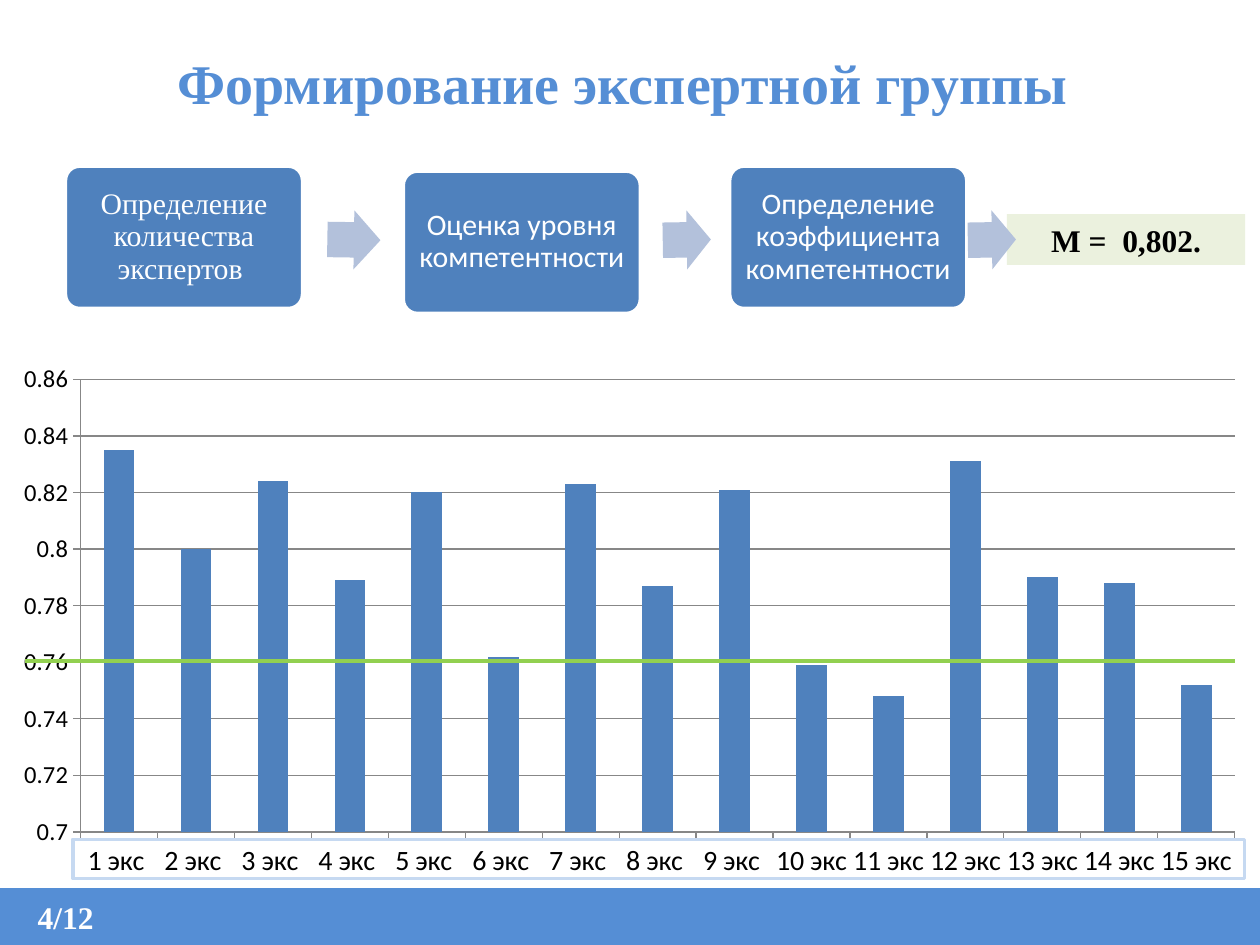
"""Builds the slide on forming an expert group: three steps, a result and a competence chart."""
from pptx import Presentation
from pptx.chart.data import CategoryChartData
from pptx.dml.color import RGBColor
from pptx.enum.chart import XL_CHART_TYPE as ChartType, XL_TICK_MARK as Tick
from pptx.enum.shapes import MSO_CONNECTOR as Connector, MSO_SHAPE as Shape
from pptx.enum.text import MSO_ANCHOR as Anchor, PP_ALIGN as Align
from pptx.oxml import parse_xml
from pptx.oxml.ns import nsdecls
from pptx.util import Cm, Pt

SERIF, SANS = "Times New Roman", "Calibri"
COLORS = {
    "accent": "558ED5", "step": "4F81BD", "arrow": "B3C1DB", "result": "EBF1DE",
    "threshold": "92D050", "frame": "C6D9F1", "grid": "878787",
    "white": "FFFFFF", "black": "000000",
}
TITLE = "Формирование экспертной группы "
PAGE = "4/12"
RESULT = "M =  0,802."
STEPS = [
    ("Определение количества экспертов ", SERIF, 1.32, 3.35),
    ("Оценка уровня компетентности ", SANS, 8.13, 3.45),
    ("Определение коэффициента компетентности ", SANS, 14.71, 3.35),
]
ARROWS = [(6.6, 1.07, 0.9), (13.36, 0.97, -0.9), (19.51, 0.97, -0.9)]
COMPETENCE = [0.835, 0.8, 0.824, 0.789, 0.82, 0.762, 0.823, 0.787,
              0.821, 0.759, 0.748, 0.831, 0.79, 0.788, 0.752]
PLOT = {"x": 0.064, "y": 0.047, "w": 0.916, "h": 0.845}


def color(name):
    return RGBColor.from_string(COLORS[name])


def set_font(font, face, size, tint, bold=False):
    font.name, font.size, font.bold = face, Pt(size), bold
    font.color.rgb = color(tint)


def write(holder, text, face, size, tint, bold=False, align=Align.CENTER):
    frame = holder.text_frame
    frame.text = text
    frame.word_wrap = True
    frame.vertical_anchor = Anchor.MIDDLE
    paragraph = frame.paragraphs[0]
    paragraph.alignment = align
    set_font(paragraph.font, face, size, tint, bold)
    return frame


def add_block(slide, kind, box, fill=None, line=None):
    block = slide.shapes.add_shape(kind, *map(Cm, box))
    block.shadow.inherit = False
    if fill:
        block.fill.solid()
        block.fill.fore_color.rgb = color(fill)
    else:
        block.fill.background()
    if line:
        block.line.color.rgb = color(line)
        block.line.width = Pt(2)
    else:
        block.line.fill.background()
    return block


def add_step(slide, text, face, left, top):
    step = add_block(slide, Shape.ROUNDED_RECTANGLE, (left, top, 4.78, 2.87), "step", "white")
    step.adjustments[0] = 0.1
    frame = write(step, text, face, 17, "white")
    frame.margin_left = frame.margin_right = Cm(0.18)
    frame.margin_top = frame.margin_bottom = Cm(0.18)
    frame.paragraphs[0].line_spacing = 0.9


def add_arrow(slide, left, width, rotation):
    arrow = add_block(slide, Shape.RIGHT_ARROW, (left, 4.24, width, 1.19), "arrow")
    arrow.adjustments[0], arrow.adjustments[1] = 0.6, 0.5
    arrow.rotation = rotation


def add_competence_chart(slide):
    data = CategoryChartData()
    data.categories = [f"{number} экс " for number in range(1, len(COMPETENCE) + 1)]
    data.add_series("Series 1", COMPETENCE)
    chart = slide.shapes.add_chart(
        ChartType.COLUMN_CLUSTERED, Cm(0), Cm(7.14), Cm(25.4), Cm(10.8), data).chart
    chart.has_legend = chart.has_title = False
    set_font(chart.font, SANS, 18, "black")
    plot = chart.plots[0]
    plot.gap_width = 150
    plot.vary_by_categories = False
    columns = plot.series[0].format.fill
    columns.solid()
    columns.fore_color.rgb = color("step")
    values = chart.value_axis
    values.minimum_scale, values.maximum_scale, values.major_unit = 0.7, 0.86, 0.02
    values.has_major_gridlines = True
    values.major_gridlines.format.line.color.rgb = color("grid")
    values.tick_labels.number_format = "General"
    values.tick_labels.number_format_is_linked = False
    for axis, size in ((chart.category_axis, 16), (values, 14)):
        axis.major_tick_mark = Tick.OUTSIDE
        axis.format.line.color.rgb = color("grid")
        set_font(axis.tick_labels.font, SANS, size, "black")
    area = chart._chartSpace.chart.plotArea
    for layout in area.findall("{*}layout"):
        area.remove(layout)
    places = "".join(f'<c:{side} val="{share}"/>' for side, share in PLOT.items())
    area.insert(0, parse_xml(
        f'<c:layout {nsdecls("c")}><c:manualLayout><c:layoutTarget val="inner"/>'
        f'<c:xMode val="edge"/><c:yMode val="edge"/>{places}</c:manualLayout></c:layout>'))


def add_threshold(slide):
    threshold = slide.shapes.add_connector(
        Connector.STRAIGHT, Cm(0.51), Cm(13.33), Cm(24.89), Cm(13.33))
    threshold.line.color.rgb = color("threshold")
    threshold.line.width = Pt(2.5)
    threshold._element.spPr.append(parse_xml(f'<a:effectLst {nsdecls("a")}/>'))


def main():
    deck = Presentation()
    deck.slide_width, deck.slide_height = Cm(25.4), Cm(19.05)
    slide = deck.slides.add_slide(deck.slide_layouts[5])
    title = slide.shapes.title
    title.left, title.top, title.width, title.height = map(Cm, (0, 0.74, 25.4, 1.85))
    write(title, TITLE, SERIF, 32, "accent", True)

    add_block(slide, Shape.RECTANGLE, (0, 17.93, 25.4, 1.12), "accent", "accent")
    page = slide.shapes.add_textbox(Cm(0.51), Cm(17.98), Cm(1.65), Cm(1.02))
    write(page, PAGE, SERIF, 18, "white", True, Align.LEFT).word_wrap = False
    result = add_block(slide, Shape.RECTANGLE, (20.3, 4.32, 4.8, 1.02), "result")
    write(result, RESULT, SERIF, 18, "black", True)

    for step in STEPS:
        add_step(slide, *step)
    add_competence_chart(slide)
    add_threshold(slide)
    for arrow in ARROWS:
        add_arrow(slide, *arrow)
    add_block(slide, Shape.RECTANGLE, (1.47, 16.92, 23.62, 0.79), line="frame")
    deck.save("out.pptx")


if __name__ == "__main__":
    main()
